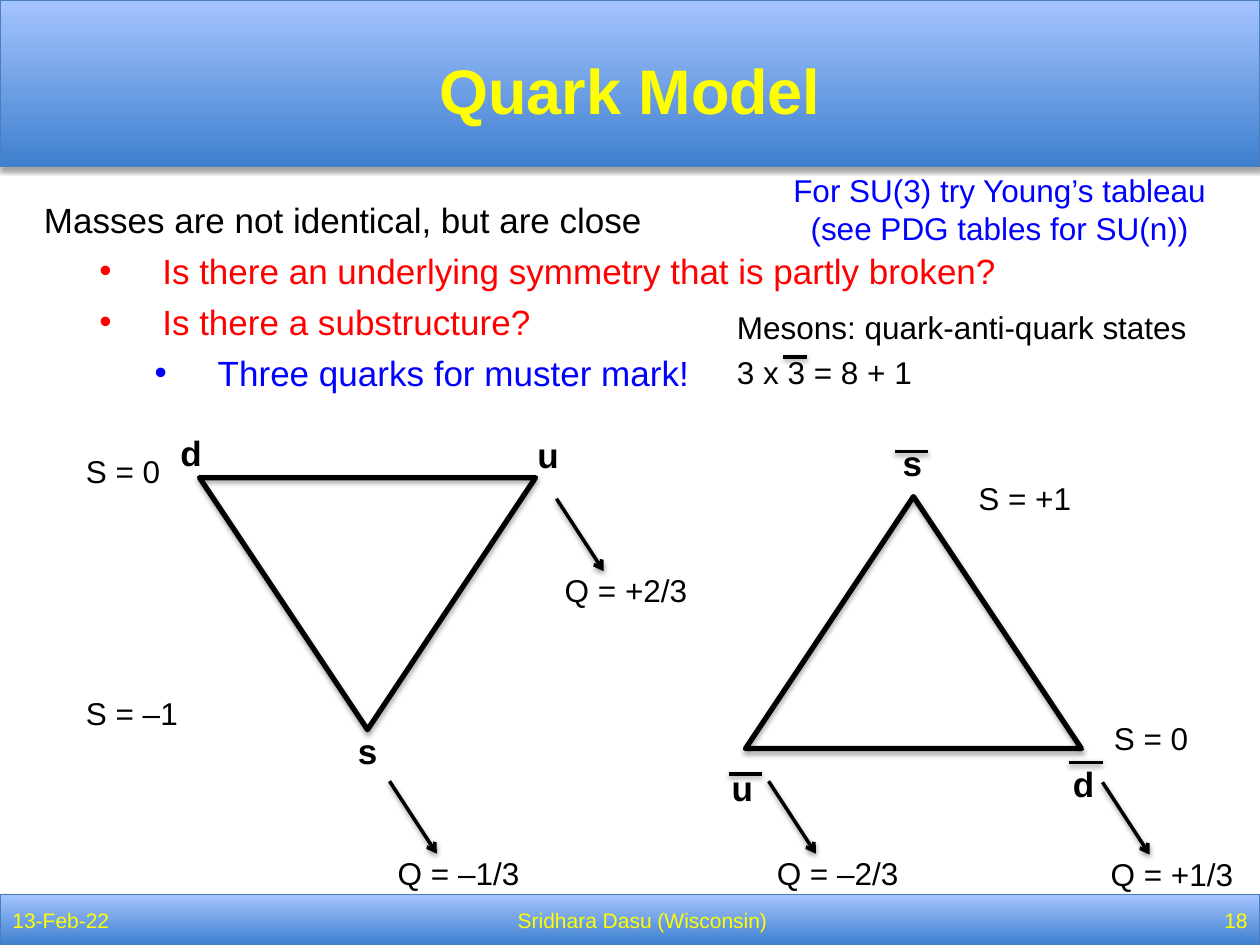
from lxml.etree import SubElement
from pptx import Presentation
from pptx.dml.color import RGBColor
from pptx.enum.shapes import MSO_CONNECTOR, MSO_SHAPE
from pptx.enum.text import MSO_ANCHOR, PP_ALIGN
from pptx.oxml.ns import qn
from pptx.util import Inches, Pt

HUES = {"deep": "3F80CE", "pale": "A4C4FF", "edge": "4B7EBC", "gold": "FFFF00",
        "ink": "000000", "red": "FF0000", "blue": "0000FF"}
WIDE, HIGH = 120, 90  # grid columns and rows
CELL = Inches(10) / WIDE
ROOT = {"name": "Arial", "size": Pt(18), "bold": False}
QUARK = {"size": Pt(20), "bold": True}
BODY = {"size": Pt(20)}
TITLE = {"size": Pt(36), "bold": True}
FOOT = {"size": Pt(12)}
SIDE = {"left": PP_ALIGN.LEFT, "mid": PP_ALIGN.CENTER, "right": PP_ALIGN.RIGHT}


def grid(*cells):
    return [round(cell * CELL) for cell in cells]


def hue(name):
    return RGBColor.from_string(HUES[name])


def style(obj, form):
    for key, val in form.items():
        setattr(obj, key, val)


def shade(shape, alpha=35, dist=1.8):
    """Give the shape a soft shadow straight below it."""
    props = shape._element.spPr
    list_ = props.find(qn("a:effectLst"))
    if list_ is None:
        list_ = SubElement(props, qn("a:effectLst"))
    drop = SubElement(list_, qn("a:outerShdw"), blurRad=str(Pt(3.1)),
                      dist=str(Pt(dist)), dir="5400000", rotWithShape="0")
    tint = SubElement(drop, qn("a:srgbClr"), val=HUES["ink"])
    SubElement(tint, qn("a:alpha"), val=str(alpha * 1000))


def write(para, text, form, tone):
    para.text = text
    style(para.font, {**ROOT, **form})
    para.font.color.rgb = hue(tone)


def label(shapes, box, text, form=ROOT, tone="ink", side="left", mid=False):
    frame = shapes.add_textbox(*grid(*box)).text_frame
    frame.word_wrap = True
    frame.vertical_anchor = MSO_ANCHOR.MIDDLE if mid else MSO_ANCHOR.TOP
    para = frame.paragraphs[0]
    para.alignment = SIDE[side]
    write(para, text, form, tone)
    return frame


def stroke(shapes, x, y, dx, dy=0, arrow=False):
    line = shapes.add_connector(MSO_CONNECTOR.STRAIGHT, *grid(x, y, x + dx, y + dy))
    line.line.width = Pt(2)
    line.line.color.rgb = hue("ink")
    if arrow:
        SubElement(line.line._get_or_add_ln(), qn("a:tailEnd"), type="arrow")
    shade(line, 38, 1.6)


def band(shapes, box):
    bar = shapes.add_shape(MSO_SHAPE.RECTANGLE, *grid(*box))
    bar.shadow.inherit = False
    bar.fill.gradient()
    bar.fill.gradient_angle = 90
    for stop, tone in zip(bar.fill.gradient_stops, ("deep", "pale")):
        stop.color.rgb = hue(tone)
    bar.line.color.rgb = hue("edge")
    bar.line.width = Pt(0.75)
    shade(bar)


def header(shapes, box):
    x, y, w, h = box
    band(shapes, box)
    label(shapes, (x + 6, y + 1, w - 12, h - 0.8), "Quark Model",
          TITLE, "gold", "mid", True)


def footer(shapes, box):
    x, y, w, h = box
    band(shapes, box)
    parts = [("13-Feb-22", 16.4, "left"), ("Sridhara Dasu (Wisconsin)", 89.6, "mid"),
             ("18", 14, "right")]
    for text, span, side in parts:
        label(shapes, (x, y, span, h), text, FOOT, "gold", side, True)
        x += span


def body(shapes, box):
    frame = label(shapes, box, "Masses are not identical, but are close", BODY)
    points = [("Is there an underlying symmetry that is partly broken?", 0.94, "red"),
              ("Is there a substructure?", 0.94, "red"),
              ("Three quarks for muster mark!", 1.38, "blue")]
    for text, left, tone in points:
        para = frame.add_paragraph()
        props = para._p.get_or_add_pPr()
        props.set("marL", str(Inches(left)))
        props.set("indent", str(Inches(-0.5)))
        para.space_before = Pt(5)
        SubElement(props, qn("a:buFont"), typeface="Arial")
        SubElement(props, qn("a:buChar"), char="•")
        write(para, text, BODY, tone)


def mesons(shapes, box):
    x, y, w, h = box
    group = shapes.add_group_shape().shapes
    frame = label(group, box, "Mesons: quark-anti-quark states")
    para = frame.add_paragraph()
    write(para, "3 x 3 = 8 + 1", ROOT, "ink")
    for item in frame.paragraphs:
        item.line_spacing = 0.6
    para.space_before = Pt(13)
    stroke(group, x + 5.6, y + 4, 2.3)


def charge(shapes, x, y, text):
    """Draw an arrow from a quark to its charge."""
    stroke(shapes, x, y, 4.5, 6.9, True)
    label(shapes, (x - 0.4, y + 6.3, 14.3, 4.8), text)


def triplet(shapes, box, flip, quarks, bars, charges, levels):
    """Draw a quark triangle; its labels are offset from the box corner."""
    x, y, w, h = box
    group = shapes.add_group_shape().shapes
    tri = group.add_shape(MSO_SHAPE.ISOSCELES_TRIANGLE, *grid(*box))
    tri.shadow.inherit = False
    tri.fill.background()
    tri.line.color.rgb = hue("ink")
    tri.line.width = Pt(3)
    if flip:
        tri._element.spPr.xfrm.set("flipV", "1")
    shade(tri)
    for text, dx, dy in quarks:
        label(group, (x + dx, y + dy, 5, 5.3), text, QUARK)
    for dx, dy in bars:
        stroke(group, x + dx, y + dy, 3.2)
    for text, dx, dy in charges:
        charge(group, x + dx, y + dy, text)
    for text, dx, dy in levels:
        label(group, (x + dx, y + dy, 14, 4.8), text)


def main():
    deck = Presentation()
    deck.slide_width, deck.slide_height = grid(WIDE, HIGH)
    shapes = deck.slides.add_slide(deck.slide_layouts[6]).shapes
    footer(shapes, (0, 85.2, WIDE, 4.8))
    header(shapes, (0, 0, WIDE, 15.85))
    body(shapes, (3, 18.35, 114, 20))
    triplet(shapes, (19, 45.5, 32, 24), True,
            [("d", -3, -5), ("u", 31, -4.8), ("s", 13.9, 23.4)], [],
            [("Q = –1/3", 18.1, 28.9), ("Q = +2/3", 34, 2)],
            [("S = 0", -12, -3), ("S = –1", -12, 20)])
    triplet(shapes, (71, 47.3, 32, 24), False,
            [("s", 13.8, -5.8), ("u", -2.5, 25.1), ("d", 30, 24.7)],
            [(14.2, -4.3), (-1.6, 26.4), (30.8, 25.3)],
            [("Q = –2/3", 2.2, 27.1), ("Q = +1/3", 34, 27.2)],
            [("S = +1", 21, -2.3), ("S = 0", 33.9, 20.6)])
    mesons(shapes, (69, 30, 48, 8))
    label(shapes, (73.2, 15.7, 44, 8.5),
          "For SU(3) try Young’s tableau (see PDG tables for SU(n))",
          tone="blue", side="mid")
    deck.save("out.pptx")


if __name__ == "__main__":
    main()
